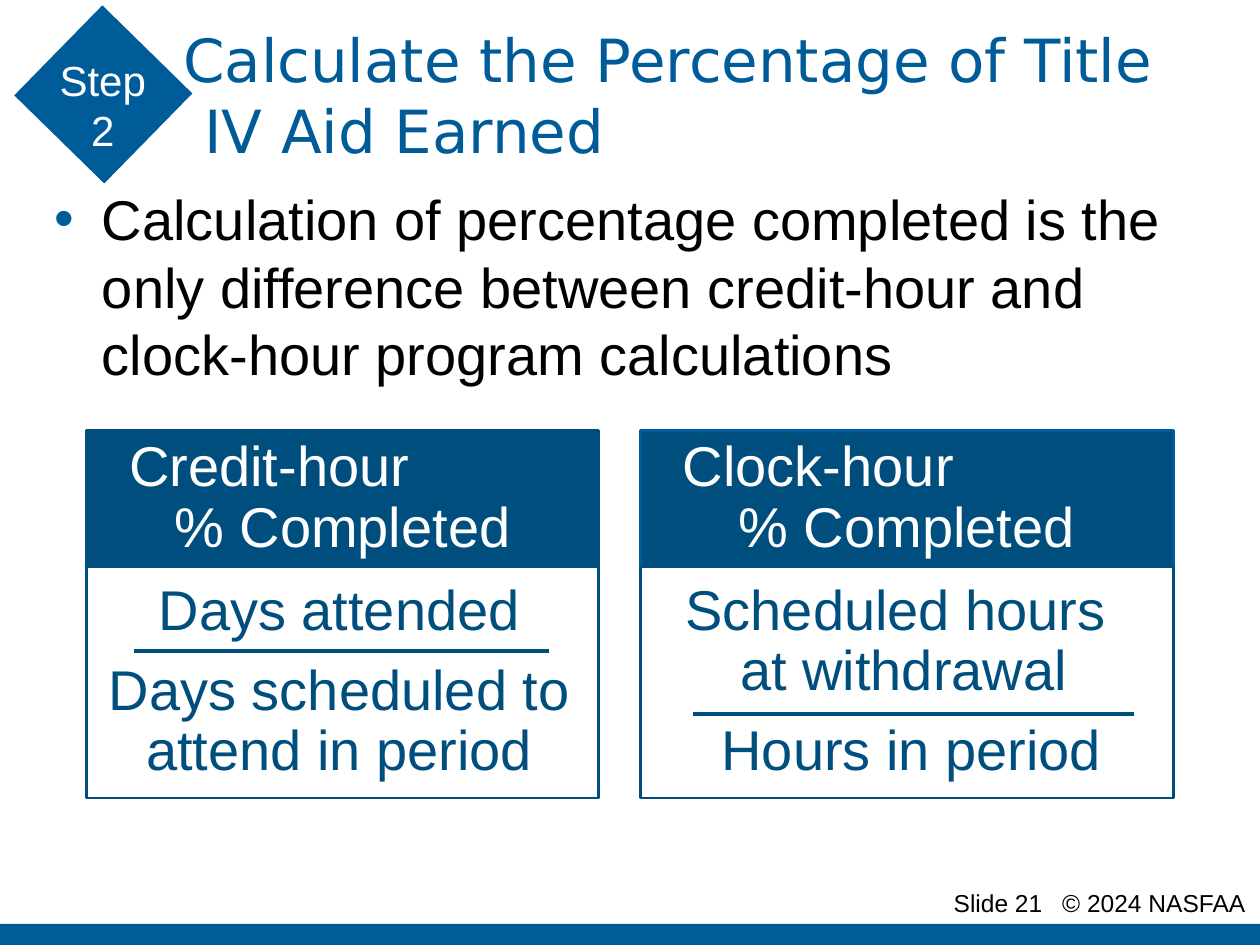
import pptx
import pptx.util
import pptx.dml.color
import pptx.enum.shapes
import pptx.enum.text
import pptx.oxml
from pptx.oxml.ns import qn

Pt = pptx.util.Pt
RGBColor = pptx.dml.color.RGBColor
ALIGN = pptx.enum.text.PP_ALIGN
ANCHOR = pptx.enum.text.MSO_ANCHOR
RECT = pptx.enum.shapes.MSO_SHAPE.RECTANGLE

BLUE = RGBColor(0x00, 0x5B, 0x99)
NAVY = RGBColor(0x00, 0x4E, 0x7D)
WHITE = RGBColor(0xFF, 0xFF, 0xFF)
BLACK = RGBColor(0x00, 0x00, 0x00)


def add_run(p, text, size, color, font="Arial"):
    r = p.add_run()
    r.text = text
    r.font.size, r.font.name = Pt(size), font
    r.font.color.rgb = color


def set_indent(p, left=0, first=0, right=0):
    pPr = p._p.get_or_add_pPr()
    for name, value in (("marL", left), ("marR", right), ("indent", first)):
        pPr.set(name, str(int(Pt(value))))
    return pPr


def add_child(parent, tag, **attrs):
    child = pptx.oxml.parse_xml(
        '<a:%s xmlns:a="http://schemas.openxmlformats.org/drawingml/2006/main"/>' % tag)
    for name, value in attrs.items():
        child.set(name, value)
    parent.append(child)
    return child


def setup_text(s, insets=(7.2, 3.6, 7.2, 3.6), anchor=ANCHOR.TOP):
    tf = s.text_frame
    tf.word_wrap = True
    tf.auto_size = pptx.enum.text.MSO_AUTO_SIZE.NONE
    tf.vertical_anchor = anchor
    tf.margin_left, tf.margin_top, tf.margin_right, tf.margin_bottom = map(Pt, insets)
    return tf


def add_rect(sl, box, fill=None, line=None):
    s = sl.shapes.add_shape(RECT, *map(Pt, box))
    s.shadow.inherit = False
    if fill is None:
        s.fill.background()
    else:
        s.fill.solid()
        s.fill.fore_color.rgb = fill
    if line is None:
        s.line.fill.background()
    else:
        s.line.color.rgb = line
        s.line.width = Pt(1.5)
    return s


def place(s, box):
    s.left, s.top, s.width, s.height = map(Pt, box)


def add_footer(sl, box):
    x, y, w, h = box
    add_rect(sl, (x, y + 24, w, 14), BLUE)
    s = sl.shapes.add_textbox(Pt(x + w - 216), Pt(y), Pt(216), Pt(h))
    p = setup_text(s, (41, 3.6, 0, 3.6)).paragraphs[0]
    # Tab stop separates the slide number from the copyright line
    tabs = add_child(p._p.get_or_add_pPr(), "tabLst")
    add_child(tabs, "tab", pos=str(int(Pt(62))), algn="l")
    add_run(p, "Slide 21\t© 2024 NASFAA", 14, BLACK)


def add_title(sl, box):
    s = sl.shapes.title
    place(s, box)
    p = setup_text(s, anchor=ANCHOR.MIDDLE).paragraphs[0]
    p.alignment = ALIGN.LEFT
    set_indent(p, 85.5, -12)
    add_run(p, "Calculate the Percentage of Title IV Aid Earned", 34, BLUE, "DejaVu Sans")


def add_body(sl, box):
    s = sl.placeholders[1]
    place(s, box)
    p = setup_text(s).paragraphs[0]
    pPr = set_indent(p, 27, -27)
    p.space_before = Pt(0)
    add_child(add_child(pPr, "buClr"), "srgbClr", val=str(BLUE))
    add_child(pPr, "buChar", char="•")
    add_run(p, "Calculation of percentage completed is the only difference between "
               "credit-hour and clock-hour program calculations", 32, BLACK)


def fill_cell(s, insets, lines, color):
    """Each line is (text, alignment, left indent, right indent, space after)."""
    tf = setup_text(s, insets, ANCHOR.MIDDLE)
    for i, (text, align, left, right, after) in enumerate(lines):
        p = tf.add_paragraph() if i else tf.paragraphs[0]
        set_indent(p, left, 0, right)
        p.alignment = align
        p.line_spacing = 0.9
        p.space_after = Pt(after)
        add_run(p, text, 32, color)


def add_formula(sl, box, heading, outline, fraction, bar):
    """Heading cell above a fraction; bar is (left, right, top) inside the box."""
    x, y, w, h = box
    head_h = 78
    head = add_rect(sl, (x, y, w, head_h), NAVY, outline)
    fill_cell(head, (10.8,) * 4, [(heading, ALIGN.LEFT, 13.5, 0, 0),
                                  ("% Completed", ALIGN.CENTER, 0, 0, GAP)], WHITE)
    cell = add_rect(sl, (x, y + head_h, w, h - head_h), None, NAVY)
    fill_cell(cell, (10.8, 10, 14.4, 10), fraction, NAVY)
    # Fraction bar
    left, right, top = bar
    c = sl.shapes.add_connector(pptx.enum.shapes.MSO_CONNECTOR.STRAIGHT,
                                Pt(x + left), Pt(y + top), Pt(x + w - right), Pt(y + top))
    c.line.color.rgb = NAVY
    c.line.width = Pt(2.5)
    add_child(c._element.find(qn("p:spPr")), "effectLst")


def add_step(sl, box):
    x, y, w, h = box
    add_rect(sl, box, BLUE).rotation = 44.4
    s = sl.shapes.add_textbox(Pt(x - 2), Pt(y + 9.5), Pt(w + 3.5), Pt(65.5))
    p = setup_text(s).paragraphs[0]
    p.alignment = ALIGN.CENTER
    add_run(p, "Step 2", 24, WHITE)


GAP = 11.2  # space after a part of a formula

CREDIT = [("Days attended", ALIGN.CENTER, 0, 0, GAP),
          ("Days scheduled to attend in period", ALIGN.CENTER, 0, 0, GAP)]
CLOCK = [("Scheduled hours", ALIGN.CENTER, 0, 9, 0),
         ("at withdrawal", ALIGN.CENTER, 0, 0, GAP),
         ("Hours in period", ALIGN.CENTER, 9, 0, GAP)]


def main():
    prs = pptx.Presentation()
    prs.slide_width, prs.slide_height = Pt(720), Pt(540)
    sl = prs.slides.add_slide(prs.slide_layouts[1])
    add_footer(sl, (0, 504, 720, 18))
    add_title(sl, (24, 12, 669.5, 84))
    add_body(sl, (24, 102, 669.5, 372))
    add_formula(sl, (49.5, 246, 292.5, 210), "Credit-hour", NAVY, CREDIT, (27, 28, 126))
    add_formula(sl, (366, 246, 304.5, 210), "Clock-hour", BLUE, CLOCK, (30, 22.5, 162))
    add_step(sl, (23, 18, 72, 72))
    prs.save("out.pptx")


if __name__ == "__main__":
    main()
